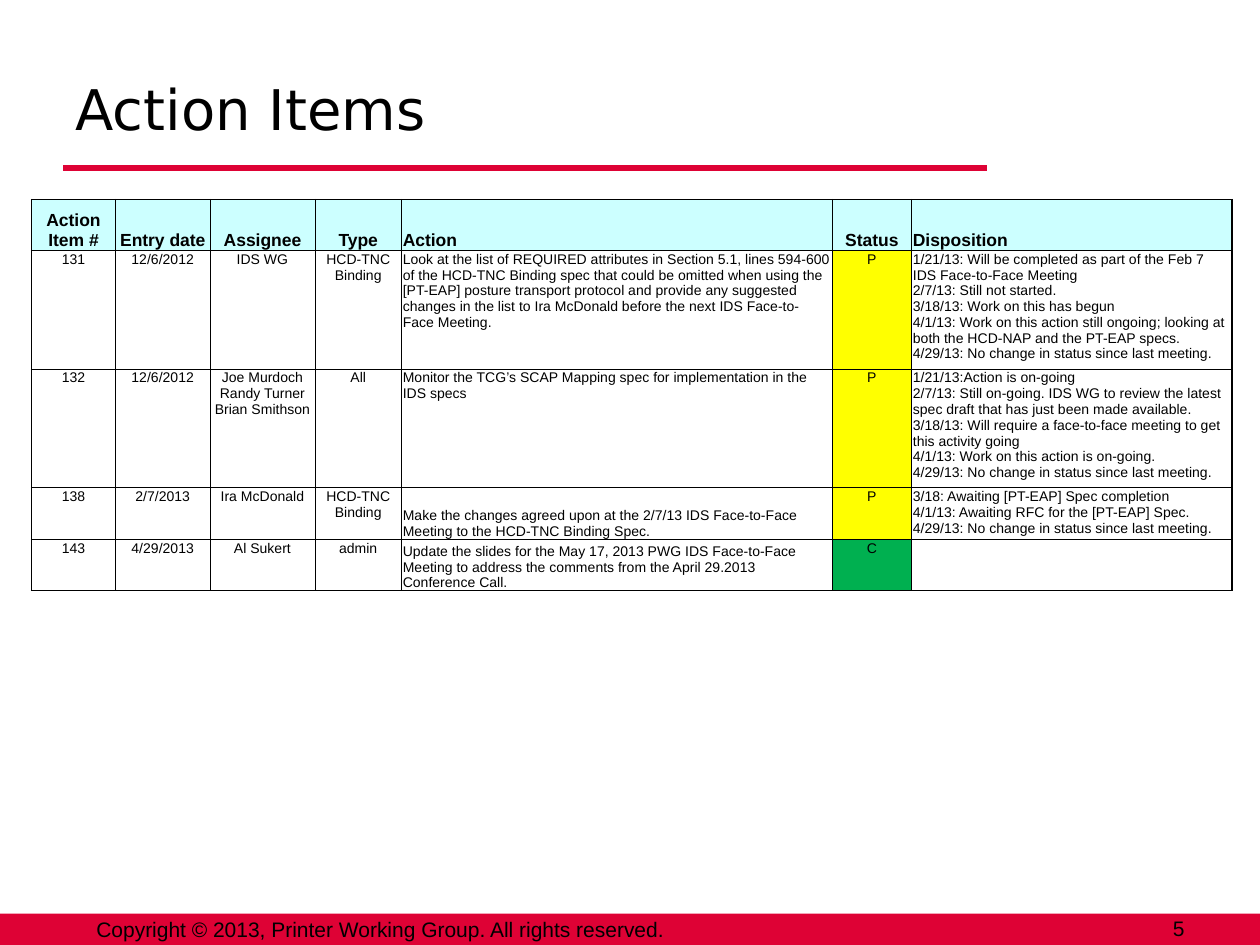
from lxml import etree
from pptx import Presentation
from pptx.dml.color import RGBColor
from pptx.enum.shapes import MSO_CONNECTOR, MSO_SHAPE
from pptx.enum.text import MSO_ANCHOR, PP_ALIGN
from pptx.oxml.ns import qn
from pptx.util import Pt

COLORS = {"red": "DE0235", "black": "000000", "header": "CCFFFF",
          "P": "FFFF00", "C": "00B050"}
TITLE = "Action Items"
COPYRIGHT = "Copyright © 2013, Printer Working Group. All rights reserved."
PAGE_NUMBER = "5"

HEADER = ["Action Item #", "Entry date", "Assignee", "Type", "Action", "Status", "Disposition"]
ITEMS = [
    ["131", "12/6/2012", "IDS WG", "HCD-TNC Binding",
     "Look at the list of REQUIRED attributes in Section 5.1, lines 594-600 of the HCD-TNC "
     "Binding spec that could be omitted when using the [PT-EAP] posture transport protocol "
     "and provide any suggested changes in the list to Ira McDonald before the next IDS "
     "Face-to-Face Meeting.",
     "P",
     "1/21/13: Will be completed as part of the Feb 7 IDS Face-to-Face Meeting\n"
     "2/7/13: Still not started.\n"
     "3/18/13: Work on this has begun\n"
     "4/1/13: Work on this action still ongoing; looking at both the HCD-NAP and the "
     "PT-EAP specs.\n"
     "4/29/13: No change in status since last meeting."],
    ["132", "12/6/2012", "Joe Murdoch\nRandy Turner\nBrian Smithson", "All",
     "Monitor the TCG’s SCAP Mapping spec for implementation in the IDS specs",
     "P",
     "1/21/13:Action is on-going\n"
     "2/7/13: Still on-going. IDS WG to review the latest spec draft that has just been "
     "made available.\n"
     "3/18/13: Will require a face-to-face meeting to get this activity going\n"
     "4/1/13: Work on this action is on-going.\n"
     "4/29/13: No change in status since last meeting."],
    ["138", "2/7/2013", "Ira McDonald", "HCD-TNC Binding",
     "Make the changes agreed upon at the 2/7/13 IDS Face-to-Face Meeting to the HCD-TNC "
     "Binding Spec.",
     "P",
     "3/18: Awaiting [PT-EAP] Spec completion\n"
     "4/1/13: Awaiting RFC for the [PT-EAP] Spec.\n"
     "4/29/13: No change in status since last meeting."],
    ["143", "4/29/2013", "Al Sukert", "admin",
     "Update the slides for the May 17, 2013 PWG IDS Face-to-Face Meeting to address the "
     "comments from the April 29.2013 Conference Call.",
     "C", ""],
]
COLUMN_WIDTHS = [48, 54, 60, 49.5, 246, 45.5, 183.2]
ROW_HEIGHTS = [29, 63, 63, 28, 27]
LEFT_ALIGNED = {"Action", "Disposition"}
BOTTOM_ANCHORED = {"138", "143"}  # items whose action text sits at the cell bottom


def color(name):
    return RGBColor.from_string(COLORS[name])


def write(frame, text, size, font="Arial", bold=False, align=PP_ALIGN.LEFT):
    """Fill the first paragraph; a newline becomes a line break."""
    frame.word_wrap = True
    paragraph = frame.paragraphs[0]
    paragraph.text = text
    paragraph.alignment = align
    for span in paragraph.runs:
        span.font.size, span.font.name, span.font.bold = Pt(size), font, bold
        span.font.color.rgb = color("black")


def add_label(page, text, left, top, width, height, **text_format):
    frame = page.shapes.add_textbox(Pt(left), Pt(top), Pt(width), Pt(height)).text_frame
    frame.vertical_anchor = MSO_ANCHOR.MIDDLE
    write(frame, text, 12, **text_format)


def add_borders(cell, **widths):
    properties = cell._tc.get_or_add_tcPr()
    for side in "LRTB":
        line = etree.SubElement(properties, qn(f"a:ln{side}"), w=str(Pt(widths[side])))
        fill = etree.SubElement(line, qn("a:solidFill"))
        etree.SubElement(fill, qn("a:srgbClr"), val=COLORS["black"])


def add_frame(page):
    """Add the title, the rule beneath it and the footer bar."""
    title = page.shapes.title
    title.left, title.top, title.width, title.height = Pt(36), Pt(27.36), Pt(522), Pt(68.4)
    title.text_frame.vertical_anchor = MSO_ANCHOR.MIDDLE
    write(title.text_frame, TITLE, 32, font="DejaVu Sans")

    rule = page.shapes.add_connector(MSO_CONNECTOR.STRAIGHT, Pt(36), Pt(96), Pt(564), Pt(96))
    rule.line.color.rgb = color("red")
    rule.line.width = Pt(3)
    etree.SubElement(rule._element.spPr, qn("a:effectLst"))

    bar = page.shapes.add_shape(MSO_SHAPE.RECTANGLE, Pt(0), Pt(522), Pt(720), Pt(18))
    bar.shadow.inherit = False
    bar.fill.solid()
    bar.fill.fore_color.rgb = color("red")
    bar.line.fill.background()

    add_label(page, COPYRIGHT, 48, 522, 354, 18)
    add_label(page, PAGE_NUMBER, 516, 521.5, 168, 18, align=PP_ALIGN.RIGHT)


def add_action_table(page):
    rows = [HEADER] + ITEMS
    table = page.shapes.add_table(len(rows), len(HEADER), Pt(18), Pt(114),
                                  Pt(sum(COLUMN_WIDTHS)), Pt(sum(ROW_HEIGHTS))).table
    table.first_row = table.horz_banding = False
    for column, width in zip(table.columns, COLUMN_WIDTHS):
        column.width = Pt(width)
    for row, height in zip(table.rows, ROW_HEIGHTS):
        row.height = Pt(height)

    for row_index, row in enumerate(rows):
        is_header = row_index == 0
        for column_index, (heading, text) in enumerate(zip(HEADER, row)):
            cell = table.cell(row_index, column_index)
            cell.margin_left = cell.margin_right = cell.margin_top = Pt(0.72)
            cell.margin_bottom = Pt(0)
            at_bottom = is_header or (heading == "Action" and row[0] in BOTTOM_ANCHORED)
            cell.vertical_anchor = MSO_ANCHOR.BOTTOM if at_bottom else MSO_ANCHOR.TOP
            write(cell.text_frame, text, 10 if is_header else 8, bold=is_header,
                  align=PP_ALIGN.LEFT if heading in LEFT_ALIGNED else PP_ALIGN.CENTER)
            add_borders(cell, L=1 if column_index == 0 else 0.5,
                        R=1 if column_index == len(HEADER) - 1 else 0.5,
                        T=1 if is_header else 0.5, B=0.5)
            if is_header or heading == "Status":
                cell.fill.solid()
                cell.fill.fore_color.rgb = color("header" if is_header else text)
            else:
                cell.fill.background()


def main():
    deck = Presentation()
    deck.slide_width, deck.slide_height = Pt(720), Pt(540)
    page = deck.slides.add_slide(deck.slide_layouts[5])
    add_frame(page)
    add_action_table(page)
    deck.save("out.pptx")


if __name__ == "__main__":
    main()
